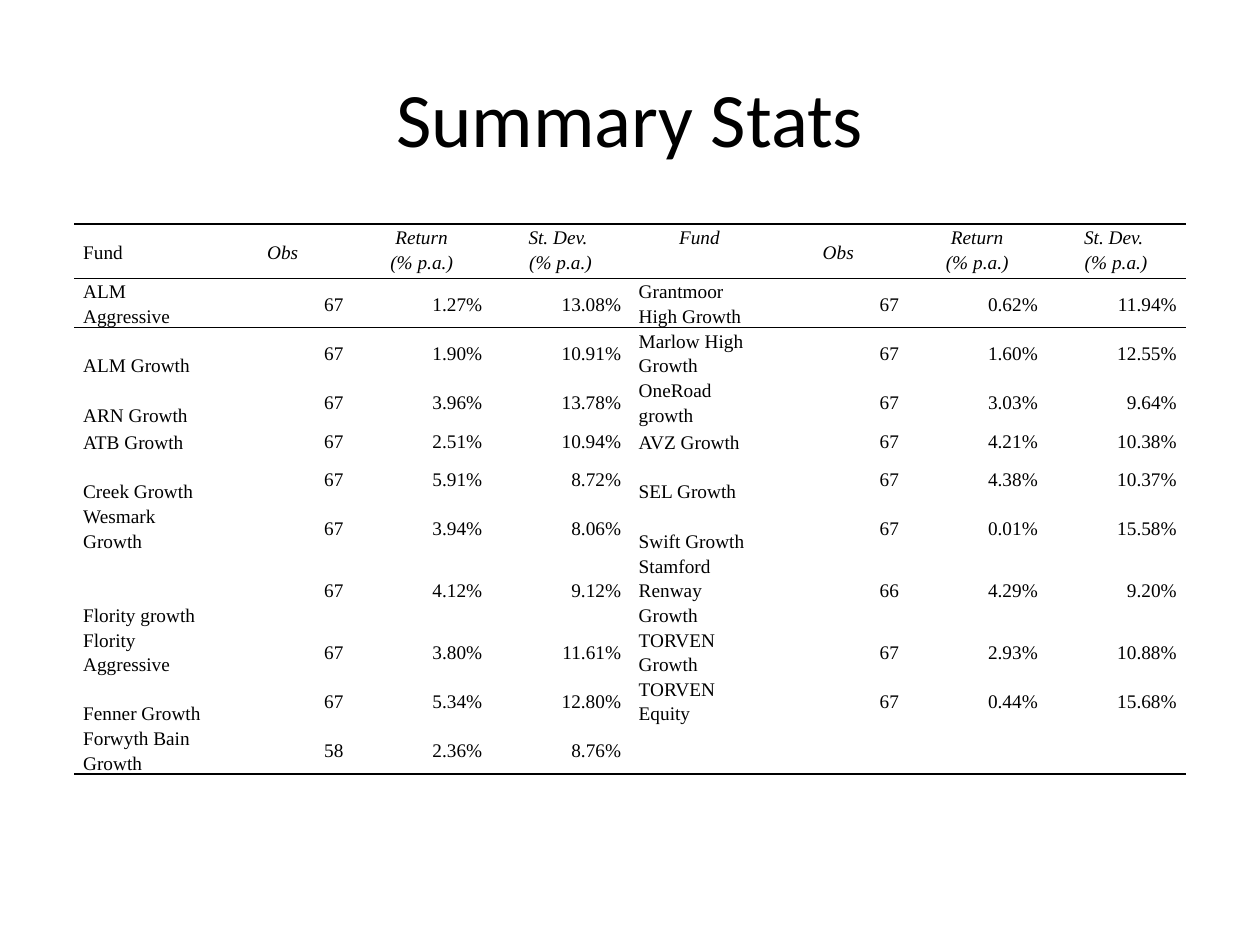
from lxml.etree import SubElement
from pptx import Presentation
from pptx.dml.color import RGBColor
from pptx.enum.text import MSO_ANCHOR as Anchor, PP_ALIGN as Align
from pptx.oxml.ns import qn
from pptx.util import Inches, Pt

BLACK = "000000"
NO_STYLE = "{2D5ABB26-0587-4C30-8999-92F81FD0307C}"


def write(frame, text, size=11, font="Times New Roman", color=BLACK,
          align=Align.LEFT, italic=False, spacing=1.15):
    """Fill a text frame, one paragraph per line of text."""
    frame.text = text
    for paragraph in frame.paragraphs:
        paragraph.alignment = align
        paragraph.line_spacing = spacing
        for run in paragraph.runs:
            run.font.size = Pt(size)
            run.font.name = font
            run.font.italic = italic
            run.font.color.rgb = RGBColor.from_string(color)


def rule(cell, side, points, color=BLACK):
    """Draw one cell border: side is lnT or lnB."""
    line = SubElement(cell._tc.get_or_add_tcPr(), qn(f"a:{side}"), w=str(Pt(points)))
    SubElement(SubElement(line, qn("a:solidFill")), qn("a:srgbClr"), val=color)


prs = Presentation()
prs.slide_width, prs.slide_height = Inches(10), Inches(7.5)
slide = prs.slides.add_slide(prs.slide_layouts[5])

# Title
title = slide.shapes.title
title.left, title.top = Inches(0.5), Inches(0.3)
title.width, title.height = Inches(9), Inches(1.25)
title.text_frame.vertical_anchor = Anchor.MIDDLE
write(title.text_frame, "Summary Stats", size=44, font="Calibri",
      align=Align.CENTER, spacing=1)

# Fund statistics: two funds side by side in each row
measures = ["Fund", "Obs", "Return\n(% p.a.)", "St. Dev. \n(% p.a.)"]
left_funds = [
    ("ALM Aggressive", "67", "1.27%", "13.08%"),
    ("ALM Growth", "67", "1.90%", "10.91%"),
    ("ARN Growth", "67", "3.96%", "13.78%"),
    ("ATB Growth", "67", "2.51%", "10.94%"),
    ("Creek Growth", "67", "5.91%", "8.72%"),
    ("Wesmark Growth", "67", "3.94%", "8.06%"),
    ("Flority growth", "67", "4.12%", "9.12%"),
    ("Flority Aggressive", "67", "3.80%", "11.61%"),
    ("Fenner Growth", "67", "5.34%", "12.80%"),
    ("Forwyth Bain Growth", "58", "2.36%", "8.76%"),
]
right_funds = [
    ("Grantmoor High Growth", "67", "0.62%", "11.94%"),
    ("Marlow High Growth", "67", "1.60%", "12.55%"),
    ("OneRoad growth", "67", "3.03%", "9.64%"),
    ("AVZ Growth", "67", "4.21%", "10.38%"),
    ("SEL Growth", "67", "4.38%", "10.37%"),
    ("Swift Growth", "67", "0.01%", "15.58%"),
    ("Stamford Renway Growth", "66", "4.29%", "9.20%"),
    ("TORVEN Growth", "67", "2.93%", "10.88%"),
    ("TORVEN Equity", "67", "0.44%", "15.68%"),
    ("", "", "", ""),
]
rows = [measures * 2] + [[*a, *b] for a, b in zip(left_funds, right_funds)]
last = len(rows) - 1

# Table grid: most rows hold two lines of text
heights = [0.39] * len(rows)
heights[0], heights[4], heights[7] = 0.43, 0.22, 0.59
table_width = 8.82
table = slide.shapes.add_table(
    len(rows), len(rows[0]), Inches(0.59), Inches(1.78),
    Inches(table_width), Inches(sum(heights))).table
table.first_row = table.horz_banding = False
table._tbl.tblPr.find(qn("a:tableStyleId")).text = NO_STYLE
for column in table.columns:
    column.width = Inches(table_width / len(rows[0]))

# Cells
for r, values in enumerate(rows):
    table.rows[r].height = Inches(heights[r])
    for c, value in enumerate(values):
        cell = table.cell(r, c)
        is_name = c % len(measures) == 0
        cell.margin_left = cell.margin_right = Inches(0.07)
        cell.margin_top = cell.margin_bottom = 0
        if r == 0:
            cell.vertical_anchor = Anchor.MIDDLE if c == 0 or value == "Obs" else Anchor.TOP
            write(cell.text_frame, value, italic=c > 0,
                  align=Align.CENTER if c else Align.LEFT)
            rule(cell, "lnT", 1.5)
            rule(cell, "lnB", 1)
        else:
            cell.vertical_anchor = Anchor.BOTTOM if is_name else Anchor.MIDDLE
            write(cell.text_frame, value, align=Align.LEFT if is_name else Align.RIGHT)
            if r == 1:
                rule(cell, "lnT", 1)
            if r == last:
                rule(cell, "lnB", 1.5)
        cell.fill.background()

prs.save("out.pptx")
